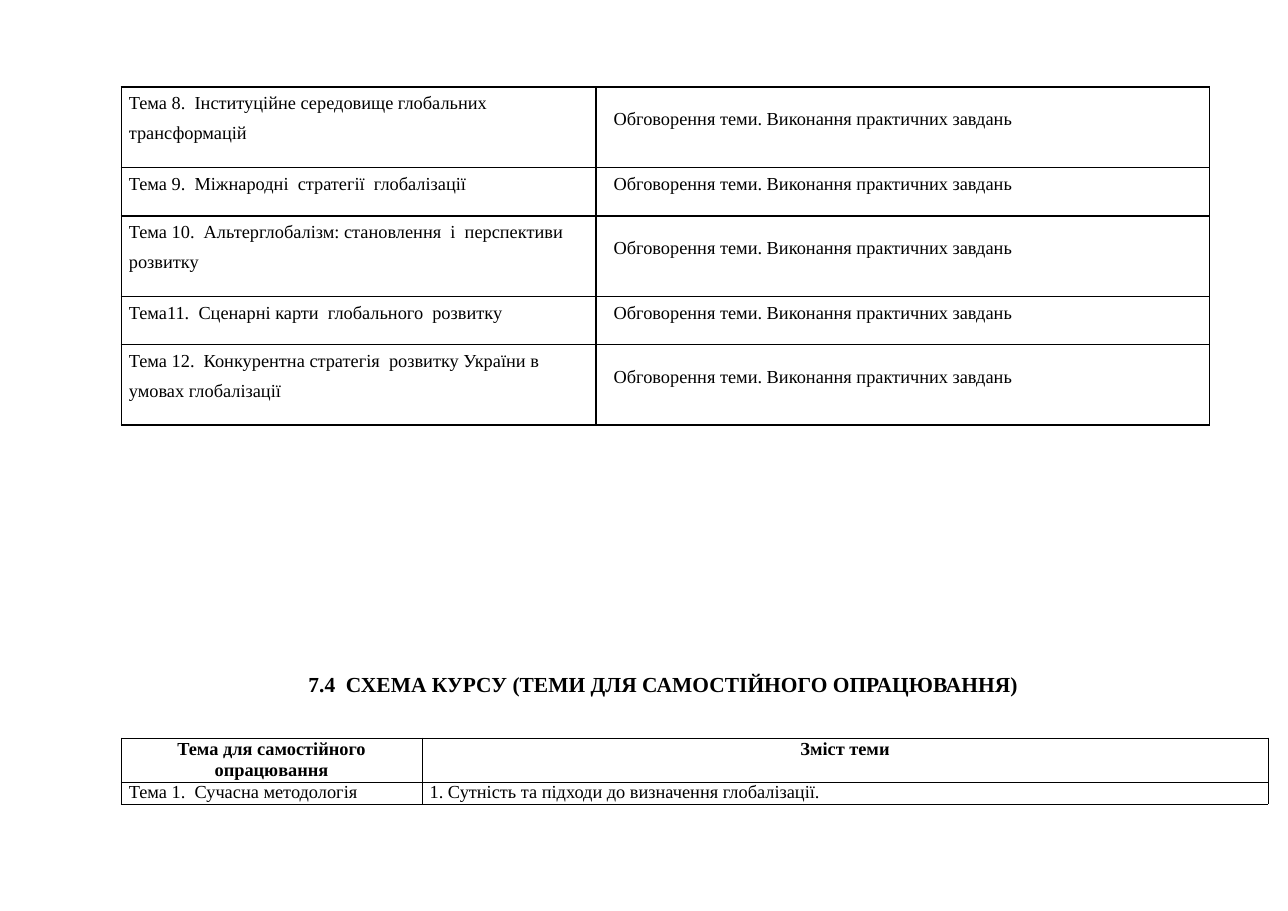
"""Build the slide with the two course topic tables."""
from lxml import etree
from pptx import Presentation, util as u
from pptx.dml.color import RGBColor
from pptx.enum import text as t
from pptx.oxml.ns import qn

TASK = "Обговорення теми. Виконання практичних завдань"
TOPICS = [
    "Тема 8.  Інституційне середовище глобальних\nтрансформацій",
    "Тема 9.  Міжнародні  стратегії  глобалізації",
    "Тема 10.  Альтерглобалізм: становлення  і  перспективи\nрозвитку",
    "Тема11.  Сценарні карти  глобального  розвитку",
    "Тема 12.  Конкурентна стратегія  розвитку України в\nумовах глобалізації",
]
HEADS = ["Тема для самостійного опрацювання", "Зміст теми"]
FIRST = ["Тема 1.  Сучасна методологія", "1. Сутність та підходи до визначення глобалізації."]


def paint(code):
    """Turn a hex string into a colour."""
    return RGBColor.from_string(code)


def write(frame, words, size=12, bold=False, align=t.PP_ALIGN.LEFT, gap=0, line=None):
    """Put one paragraph per line of words into a frame."""
    frame.word_wrap = True
    for i, part in enumerate(words.split("\n")):
        para = frame.paragraphs[0] if i == 0 else frame.add_paragraph()
        para.alignment = align
        para.space_before = u.Pt(gap if i else 0)
        if line:
            para.line_spacing = u.Pt(line)
        run = para.add_run()
        run.text = part
        run.font.name = "Times New Roman"
        run.font.size = u.Pt(size)
        run.font.bold = bold
        run.font.color.rgb = paint("000000")


def inset(box, left=0, top=0, right=0):
    """Set the margins of a cell or a text frame."""
    box.margin_left, box.margin_top = u.Inches(left), u.Inches(top)
    box.margin_right, box.margin_bottom = u.Inches(right), 0


def edge(cell, width):
    """Draw the four borders of a cell and leave it unfilled."""
    props = cell._tc.get_or_add_tcPr()
    for side in ("a:lnL", "a:lnR", "a:lnT", "a:lnB"):
        line = etree.SubElement(props, qn(side), w=str(u.Pt(width)))
        fill = etree.SubElement(line, qn("a:solidFill"))
        etree.SubElement(fill, qn("a:srgbClr"), val="000000")
    cell.fill.background()


def grid(slide, top, cols, rows, width):
    """Add a plain bordered table and return it."""
    table = slide.shapes.add_table(
        len(rows), len(cols), u.Inches(1.1), u.Inches(top),
        u.Inches(sum(cols)), u.Inches(sum(rows))).table
    table.first_row = table.horz_banding = False
    for col, size in zip(table.columns, cols):
        col.width = u.Inches(size)
    for row, size in zip(table.rows, rows):
        row.height = u.Inches(size)
    for cell in table.iter_cells():
        edge(cell, width)
    return table


def tasks(slide):
    """Add the table of topics and class work."""
    rows = [0.73 if "\n" in topic else 0.44 for topic in TOPICS]
    table = grid(slide, 0.79, [4.31, 5.57], rows, 1)
    for i, topic in enumerate(TOPICS):
        name, work = table.cell(i, 0), table.cell(i, 1)
        inset(name, left=0.07, top=0.06)
        write(name.text_frame, topic, gap=6.2)
        inset(work, left=0.16, top=0.2 if "\n" in topic else 0.06)
        write(work.text_frame, TASK)


def title(slide):
    """Add the section heading."""
    frame = slide.shapes.add_textbox(
        u.Inches(2.8), u.Inches(6.07), u.Inches(6.51), u.Inches(0.26)).text_frame
    inset(frame, top=0.02)
    write(frame, "7.4  СХЕМА КУРСУ (ТЕМИ ДЛЯ САМОСТІЙНОГО ОПРАЦЮВАННЯ)", size=14, bold=True)


def scheme(slide):
    """Add the table of topics for self-study."""
    table = grid(slide, 6.7, [2.73, 7.68], [0.4, 0.2], 0.5)
    for i, (head, words) in enumerate(zip(HEADS, FIRST)):
        top, low = table.cell(0, i), table.cell(1, i)
        inset(top, left=0.2, right=0.2)
        write(top.text_frame, head, bold=True, align=t.PP_ALIGN.CENTER, line=13.8)
        inset(low, left=0.07)
        write(low.text_frame, words, line=13.3)


def main():
    """Build and save the slide."""
    deck = Presentation()
    deck.slide_width, deck.slide_height = u.Inches(11.69), u.Inches(8.27)
    slide = deck.slides.add_slide(deck.slide_layouts[6])
    title(slide)
    tasks(slide)
    scheme(slide)
    deck.save("out.pptx")


if __name__ == "__main__":
    main()
